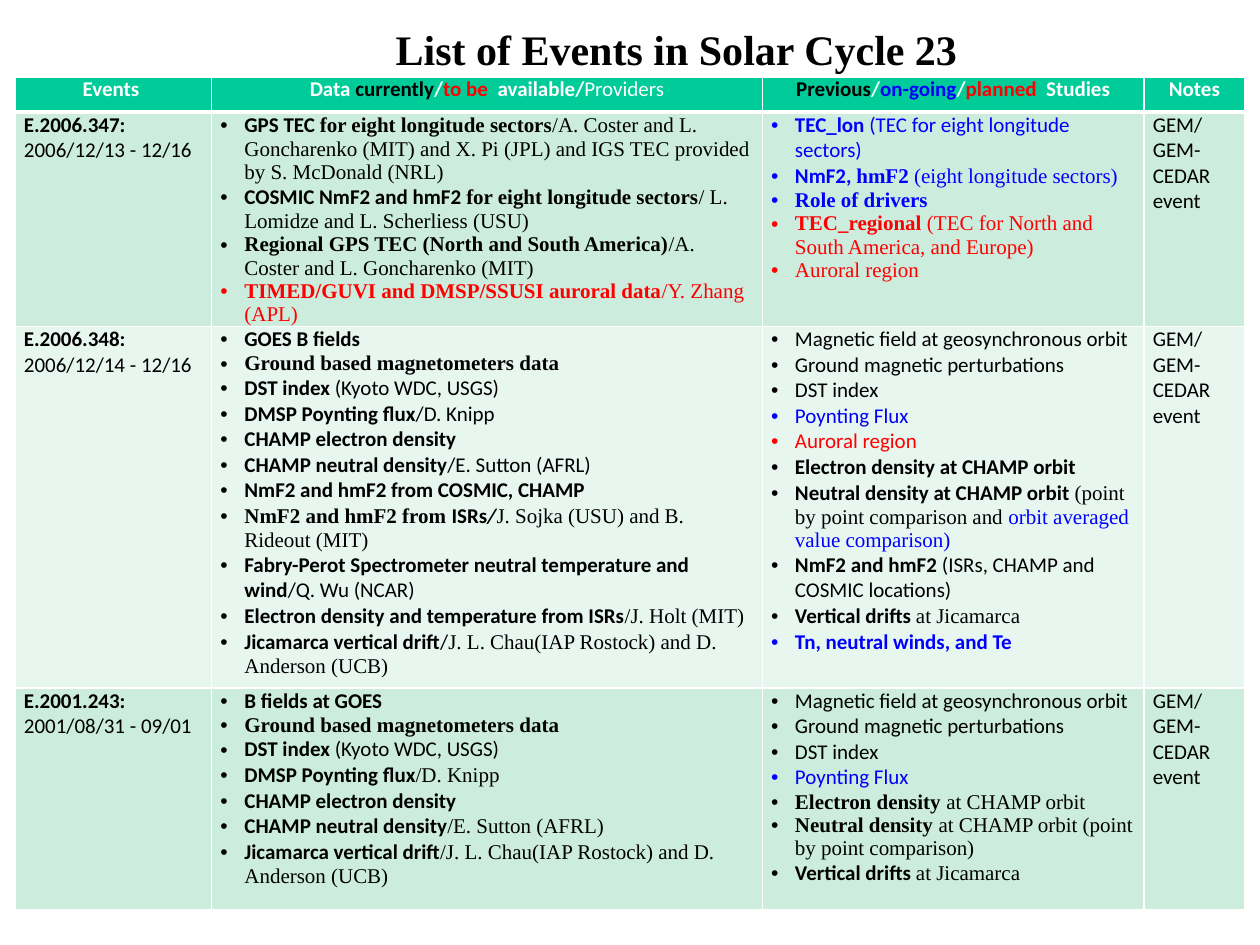
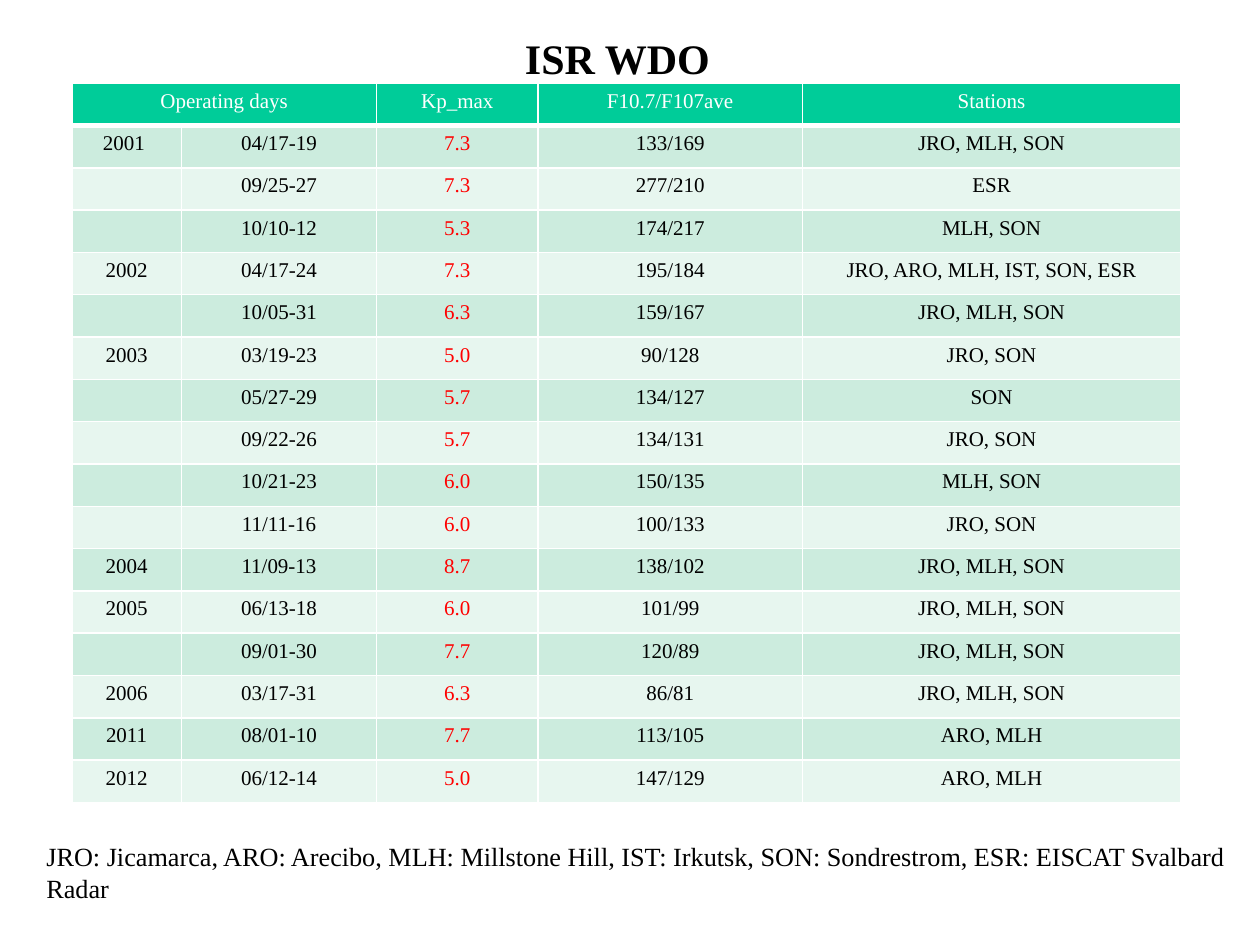
import pptx
import pptx.dml.color
import pptx.enum.text
import pptx.oxml.ns
import pptx.util
from lxml import etree

# Shared look
SLIDE_WIDTH, SLIDE_HEIGHT = 10, 7.5
SERIF, SANS = "Times New Roman", "Calibri"
BLACK, WHITE, RED, BLUE = "000000", "FFFFFF", "FF0000", "0000FF"
HEADER_FILL = "00CC99"
BAND_FILLS = ("CCECDE", "E7F6EF")
TABLE_SIZE, TITLE_SIZE, NOTE_SIZE = 12, 24, 15
INDENT = 0.19
CENTER = pptx.enum.text.PP_ALIGN.CENTER
LEFT = pptx.enum.text.PP_ALIGN.LEFT

# Events content. A paragraph is a list of (text, flags):
# B bold, I italic, T serif font, r red, b blue, w white
EVENTS_TITLE = "List of Events in Solar Cycle 23"
EVENT_COLUMNS = (1.56, 4.37, 3.03, 0.8)
EVENT_ROWS = (0.28, 1.68, 2.87, 1.76)
BULLETED_COLUMNS = (1, 2)

GROUND_DATA = [("Ground based magnetometers data", "BT")]
DST_DATA = [("DST index ", "B"), ("(Kyoto WDC, USGS)", "")]
CHAMP_ELECTRONS = [("CHAMP electron density", "B")]
FIELD_STUDIES = [
    [("Magnetic field at geosynchronous orbit", "")],
    [("Ground magnetic perturbations", "")],
    [("DST index", "")],
    [("Poynting Flux", "b")],
]
DRIFT_STUDY = [("Vertical drifts ", "B"), ("at Jicamarca", "T")]
NOTES = [[("GEM/GEM-CEDAR event", "")]]

EVENT_HEADER = [
    [[("Events ", "Bw")]],
    [[("Data ", "Bw"), ("currently", "B"), ("/", "Bw"), ("to be  ", "Br"),
      ("available/", "Bw"), ("Providers", "w")]],
    [[("Previous", "B"), ("/", "Bw"), ("on-going", "Bb"), ("/", "Bw"),
      ("planned ", "Br"), (" Studies", "Bw")]],
    [[("Notes", "Bw")]],
]
EVENTS = [
    [
        [[("E.2006.347:", "B")], [("2006/12/13 - 12/16", "")]],
        [
            [("GPS TEC ", "B"), ("for eight longitude sectors", "BT"),
             ("/A. Coster and L. Goncharenko (MIT) and X. Pi (JPL) and IGS TEC "
              "provided by S. McDonald (NRL)", "T")],
            [("COSMIC NmF2 and hmF2 ", "B"), ("for eight longitude sectors", "BT"),
             ("/ L. Lomidze and L. Scherliess (USU)", "T")],
            [("Regional GPS TEC (North and South America)", "BT"),
             ("/A. Coster and L. Goncharenko (MIT)", "T")],
            [("TIMED/GUVI and DMSP/SSUSI auroral data", "BTr"),
             ("/Y. Zhang (APL)", "Tr")],
        ],
        [
            [("TEC_lon", "Bb"), (" (TEC for eight longitude sectors)", "b")],
            [("NmF2, ", "Bb"), ("hmF2 ", "BTb"), ("(eight longitude sectors)", "Tb")],
            [("Role of drivers", "BTb")],
            [("TEC_regional", "BTr"),
             (" (TEC for North and South America, and Europe)", "Tr")],
            [("Auroral region", "Tr")],
        ],
        NOTES,
    ],
    [
        [[("E.2006.348:", "B")], [("2006/12/14 - 12/16", "")]],
        [
            [("GOES B fields", "B")],
            GROUND_DATA,
            DST_DATA,
            [("DMSP Poynting flux", "B"), ("/D. Knipp", "")],
            CHAMP_ELECTRONS,
            [("CHAMP neutral density", "B"), ("/E. Sutton (AFRL)", "")],
            [("NmF2 and hmF2 from COSMIC, CHAMP", "B")],
            [("NmF2 and hmF2 from ", "BT"), ("ISRs", "B"), ("/", "BI"),
             ("J. Sojka (USU) and B. Rideout (MIT)", "T")],
            [("Fabry-Perot Spectrometer neutral temperature and wind", "B"),
             ("/Q. Wu (NCAR)", "")],
            [("Electron density and temperature from ISRs", "B"),
             ("/J. Holt (MIT)", "T")],
            [("Jicamarca vertical drift", "B"), ("/", ""),
             ("J. L. Chau(IAP Rostock) and D. Anderson (UCB)", "T")],
        ],
        FIELD_STUDIES + [
            [("Auroral region", "r")],
            [("Electron density at CHAMP orbit", "B")],
            [("Neutral density at CHAMP orbit ", "B"),
             ("(point by point comparison and", "T"),
             (" orbit averaged value comparison)", "Tb")],
            [("NmF2 and hmF2 ", "B"), ("(ISRs, CHAMP and COSMIC locations)", "")],
            DRIFT_STUDY,
            [("Tn, neutral winds, and Te", "Bb")],
        ],
        NOTES,
    ],
    [
        [[("E.2001.243:", "B")], [("2001/08/31 - 09/01", "")]],
        [
            [("B fields at GOES", "B")],
            GROUND_DATA,
            DST_DATA,
            [("DMSP Poynting flux", "B"), ("/D. Knipp", "T")],
            CHAMP_ELECTRONS,
            [("CHAMP neutral density", "B"), ("/E. Sutton (AFRL)", "T")],
            [("Jicamarca vertical drift", "B"),
             ("/J. L. Chau(IAP Rostock) and D. Anderson (UCB)", "T")],
        ],
        FIELD_STUDIES + [
            [("Electron density ", "BT"), ("at CHAMP orbit", "T")],
            [("Neutral density ", "BT"),
             ("at CHAMP orbit (point by point comparison)", "T")],
            DRIFT_STUDY,
        ],
        NOTES,
    ],
]

# Radar content
RADAR_TITLE = "ISR WDO"
RADAR_COLUMNS = (0.87, 1.55, 1.28, 2.1, 3)
RADAR_HEIGHT = 5.71
KP_COLUMN = 2
RADAR_HEADER = ("Operating days", "", "Kp_max", "F10.7/F107ave", "Stations")
OPERATIONS = [
    ("2001 ", "04/17-19", "7.3", "133/169", "JRO, MLH, SON"),
    ("", "09/25-27", "7.3", "277/210", "ESR"),
    ("", "10/10-12", "5.3", "174/217", "MLH, SON"),
    ("2002", "04/17-24", "7.3", "195/184", "JRO, ARO, MLH, IST, SON, ESR"),
    ("", "10/05-31", "6.3", "159/167", "JRO, MLH, SON"),
    ("2003", "03/19-23", "5.0", "90/128", "JRO, SON"),
    ("", "05/27-29", "5.7", "134/127", "SON"),
    ("", "09/22-26", "5.7", "134/131", "JRO, SON"),
    ("", "10/21-23", "6.0", "150/135", "MLH, SON"),
    ("", "11/11-16", "6.0", "100/133", "JRO, SON"),
    ("2004", "11/09-13", "8.7", "138/102", "JRO, MLH, SON"),
    ("2005", "06/13-18", "6.0", "101/99", "JRO, MLH, SON"),
    ("", "09/01-30", "7.7", "120/89", "JRO, MLH, SON"),
    ("2006", "03/17-31", "6.3", "86/81", "JRO, MLH, SON"),
    ("2011", "08/01-10", "7.7", "113/105", "ARO, MLH"),
    ("2012", "06/12-14", "5.0", "147/129", "ARO, MLH"),
]
STATION_KEY = ("JRO: Jicamarca, ARO: Arecibo, MLH: Millstone Hill, IST: Irkutsk, "
               "SON: Sondrestrom, ESR: EISCAT Svalbard Radar")


def rgb(value):
    return pptx.dml.color.RGBColor.from_string(value)


def inches(*values):
    return [pptx.util.Inches(value) for value in values]


def add_child(parent, tag, **attributes):
    return etree.SubElement(parent, pptx.oxml.ns.qn(tag), **attributes)


# Text
def add_span(para, text, size=TABLE_SIZE, font=SERIF, color=BLACK, bold=False, italic=False):
    span = para.add_run()
    span.text = text
    span.font.size = pptx.util.Pt(size)
    span.font.name = font
    span.font.color.rgb = rgb(color)
    span.font.bold = bold
    span.font.italic = italic


def add_flagged_span(para, text, flags):
    color = next((value for flag, value in (("r", RED), ("b", BLUE), ("w", WHITE))
                  if flag in flags), BLACK)
    add_span(para, text, font=SERIF if "T" in flags else SANS, color=color,
             bold="B" in flags, italic="I" in flags)


def add_bullet(para):
    props = para._p.get_or_add_pPr()
    props.set("marL", str(pptx.util.Inches(INDENT)))
    props.set("indent", str(-pptx.util.Inches(INDENT)))
    add_child(props, "a:buFont", typeface="Arial")
    add_child(props, "a:buChar", char="•")


def add_page(deck, title, place, align):
    page = deck.slides.add_slide(deck.slide_layouts[5])
    box = page.shapes.title
    box.left, box.top, box.width, box.height = inches(*place)
    frame = box.text_frame
    frame.auto_size = pptx.enum.text.MSO_AUTO_SIZE.NONE
    frame.vertical_anchor = pptx.enum.text.MSO_ANCHOR.TOP
    frame.paragraphs[0].alignment = align
    add_span(frame.paragraphs[0], title, size=TITLE_SIZE, bold=True)
    return page


# Tables
def style_cell(cell, row):
    """Draw white cell borders and the header or band fill."""
    props = cell._tc.get_or_add_tcPr()
    for side in "LRTB":
        width = 3 if row == 0 and side == "B" else 1
        line = add_child(props, f"a:ln{side}", w=str(pptx.util.Pt(width)))
        add_child(add_child(line, "a:solidFill"), "a:srgbClr", val=WHITE)
    cell.fill.solid()
    cell.fill.fore_color.rgb = rgb(HEADER_FILL if row == 0 else BAND_FILLS[(row - 1) % 2])


def add_grid(page, left, top, widths, heights):
    place = inches(left, top, sum(widths), sum(heights))
    table = page.shapes.add_table(len(heights), len(widths), *place).table
    for column, width in zip(table.columns, inches(*widths)):
        column.width = width
    for number, (row, height) in enumerate(zip(table.rows, inches(*heights))):
        row.height = height
        for cell in row.cells:
            style_cell(cell, number)
    return table


def fill_event_cell(cell, paragraphs, bulleted, align):
    cell.margin_left = cell.margin_right = pptx.util.Inches(0.07)
    cell.margin_top = cell.margin_bottom = 0
    for number, spans in enumerate(paragraphs):
        frame = cell.text_frame
        para = frame.add_paragraph() if number else frame.paragraphs[0]
        para.alignment = align
        if bulleted:
            add_bullet(para)
        for text, flags in spans:
            add_flagged_span(para, text, flags)


def build_events(deck):
    page = add_page(deck, EVENTS_TITLE, (3.04, 0.14, 5.4, 0.4), LEFT)
    table = add_grid(page, 0.12, 0.61, EVENT_COLUMNS, EVENT_ROWS)
    for row, cells in enumerate([EVENT_HEADER] + EVENTS):
        for column, paragraphs in enumerate(cells):
            fill_event_cell(table.cell(row, column), paragraphs,
                            bulleted=row > 0 and column in BULLETED_COLUMNS,
                            align=LEFT if row else CENTER)


def build_radars(deck):
    page = add_page(deck, RADAR_TITLE, (3.4, 0.21, 3, 0.4), CENTER)
    rows = [RADAR_HEADER] + OPERATIONS
    table = add_grid(page, 0.57, 0.66, RADAR_COLUMNS, [RADAR_HEIGHT / len(rows)] * len(rows))
    table.cell(0, 0).merge(table.cell(0, 1))
    for row, texts in enumerate(rows):
        for column, text in enumerate(texts):
            para = table.cell(row, column).text_frame.paragraphs[0]
            para.alignment = CENTER
            if text:
                color = WHITE if row == 0 else RED if column == KP_COLUMN else BLACK
                add_span(para, text, color=color)
            else:  # keeps an empty cell from stretching its row
                add_child(para._p, "a:endParaRPr", sz=str(TABLE_SIZE * 100))

    # Station key
    box = page.shapes.add_textbox(*inches(0.27, 6.62, 9.73, 0.35))
    box.text_frame.word_wrap = True
    add_span(box.text_frame.paragraphs[0], STATION_KEY, size=NOTE_SIZE)


def main():
    deck = pptx.Presentation()
    deck.slide_width, deck.slide_height = inches(SLIDE_WIDTH, SLIDE_HEIGHT)
    build_events(deck)
    build_radars(deck)
    deck.save("out.pptx")


if __name__ == "__main__":
    main()
